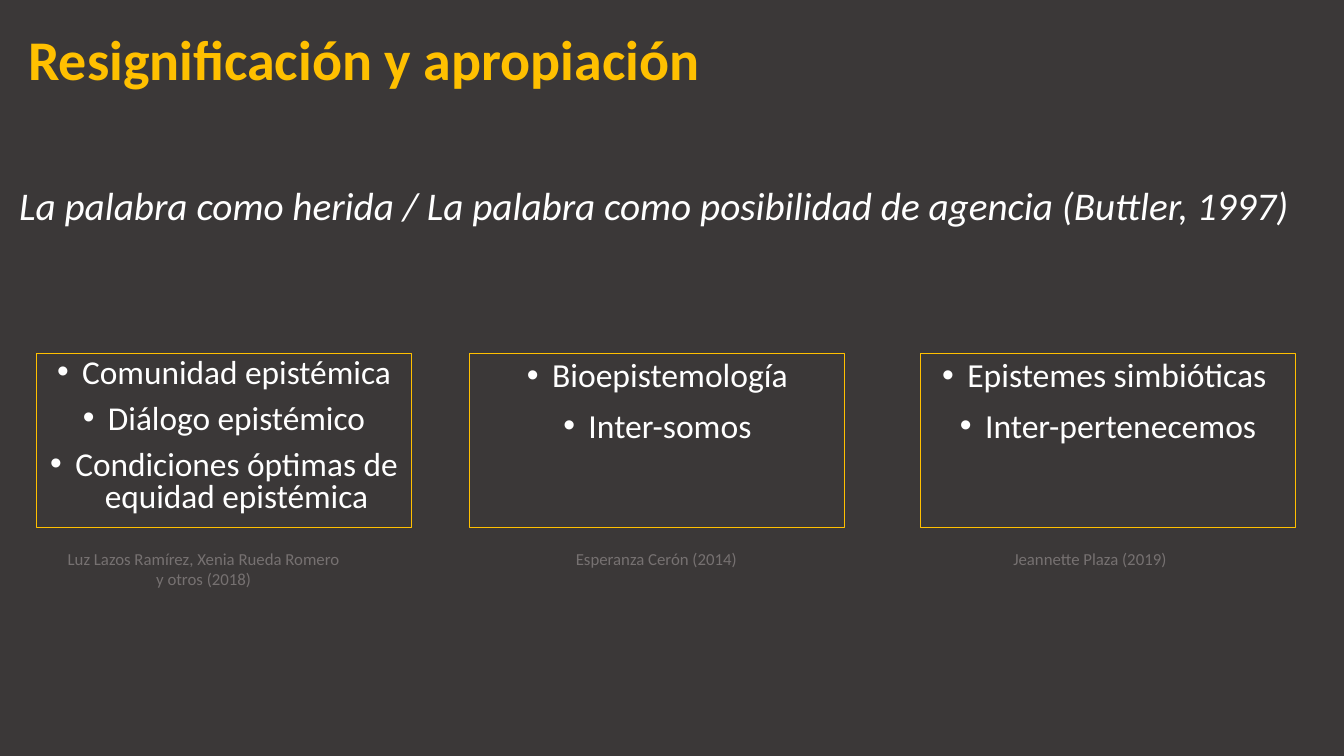
"""Build the slide on resignification and appropriation."""
import lxml.etree
import pptx
import pptx.dml.color
import pptx.enum.shapes
import pptx.enum.text
import pptx.oxml.ns
import pptx.util

Inches = pptx.util.Inches
Pt = pptx.util.Pt
RGBColor = pptx.dml.color.RGBColor
ALIGN = pptx.enum.text.PP_ALIGN
ANCHOR = pptx.enum.text.MSO_ANCHOR

DARK = RGBColor(0x3B, 0x38, 0x38)
GOLD = RGBColor(0xFF, 0xC0, 0x00)
WHITE = RGBColor(0xFF, 0xFF, 0xFF)
GREY = RGBColor(0x76, 0x71, 0x71)

TITLE = "Resignificación y apropiación"
QUOTE = "La palabra como herida / La palabra como posibilidad de agencia (Buttler, 1997)"
CONCEPTS = [
    {"left": 0.36, "size": 23.8, "spacing": 0.8,
     "items": ["Comunidad epistémica", "Diálogo epistémico",
               "Condiciones óptimas de equidad epistémica"],
     "author": "Luz Lazos Ramírez, Xenia Rueda Romero y otros (2018)",
     "author_left": 0.56, "author_height": 0.5},
    {"left": 4.66, "size": 24, "spacing": 0.9,
     "items": ["Bioepistemología", "Inter-somos"],
     "author": "Esperanza Cerón (2014)",
     "author_left": 5.05, "author_height": 0.3},
    {"left": 9.13, "size": 24, "spacing": 0.9,
     "items": ["Epistemes simbióticas ", "Inter-pertenecemos"],
     "author": "Jeannette Plaza (2019)",
     "author_left": 9.35, "author_height": 0.3},
]
BOX_TOP, BOX_WIDTH, BOX_HEIGHT = 3.51, 3.72, 1.72
AUTHOR_TOP, AUTHOR_WIDTH = 5.39, 2.92


def place(sp, left, top, width, height):
    box = {"left": left, "top": top, "width": width, "height": height}
    for name, value in box.items():
        setattr(sp, name, Inches(value))


def write(sp, lines, font, para, anchor=ANCHOR.TOP, bullet=None):
    tf = sp.text_frame
    tf.word_wrap = True
    tf.auto_size = pptx.enum.text.MSO_AUTO_SIZE.NONE
    tf.vertical_anchor = anchor
    for i, line in enumerate(lines):
        p = tf.add_paragraph() if i else tf.paragraphs[0]
        for name, value in para.items():
            setattr(p, name, value)
        pPr = p._p.get_or_add_pPr()
        indent = Inches(0.25) if bullet else 0
        pPr.set("marL", str(indent))
        pPr.set("indent", str(-indent))
        if bullet:
            bu_font = lxml.etree.SubElement(pPr, pptx.oxml.ns.qn("a:buFont"))
            bu_font.set("typeface", "Arial")
            bu = lxml.etree.SubElement(pPr, pptx.oxml.ns.qn("a:buChar"))
            bu.set("char", bullet)
        else:
            lxml.etree.SubElement(pPr, pptx.oxml.ns.qn("a:buNone"))
        r = p.add_run()
        r.text = line
        style = dict(font)
        r.font.color.rgb = style.pop("color")
        for name, value in style.items():
            setattr(r.font, name, value)


def text_font(size, color, **extra):
    return {"name": "Calibri", "size": Pt(size), "color": color, **extra}


def add_concept(s, concept):
    sp = s.shapes.add_shape(
        pptx.enum.shapes.MSO_SHAPE.RECTANGLE, Inches(concept["left"]),
        Inches(BOX_TOP), Inches(BOX_WIDTH), Inches(BOX_HEIGHT))
    sp.shadow.inherit = False
    sp.fill.background()
    sp.line.color.rgb = GOLD
    sp.line.width = Pt(0.75)
    para = {"alignment": ALIGN.CENTER, "line_spacing": concept["spacing"],
            "space_before": Pt(10)}
    write(sp, concept["items"], text_font(concept["size"], WHITE), para, bullet="•")
    author = s.shapes.add_textbox(
        Inches(concept["author_left"]), Inches(AUTHOR_TOP),
        Inches(AUTHOR_WIDTH), Inches(concept["author_height"]))
    write(author, [concept["author"]], text_font(12, GREY), {"alignment": ALIGN.CENTER})


def main():
    prs = pptx.Presentation()
    prs.slide_width, prs.slide_height = Inches(13.33), Inches(7.5)
    s = prs.slides.add_slide(prs.slide_layouts[1])
    s.background.fill.solid()
    s.background.fill.fore_color.rgb = DARK

    title, quote = s.shapes.title, s.placeholders[1]
    place(title, 0.18, 0.13, 11.5, 0.98)
    write(title, [TITLE], text_font(40, GOLD, bold=True),
          {"alignment": ALIGN.LEFT, "line_spacing": 0.9}, ANCHOR.MIDDLE)
    place(quote, 0.09, 1.8, 13.02, 0.67)
    write(quote, [QUOTE], text_font(28, WHITE, italic=True),
          {"alignment": ALIGN.LEFT, "line_spacing": 0.9, "space_before": Pt(10)})
    for concept in CONCEPTS:
        add_concept(s, concept)
    prs.save("out.pptx")


if __name__ == "__main__":
    main()
